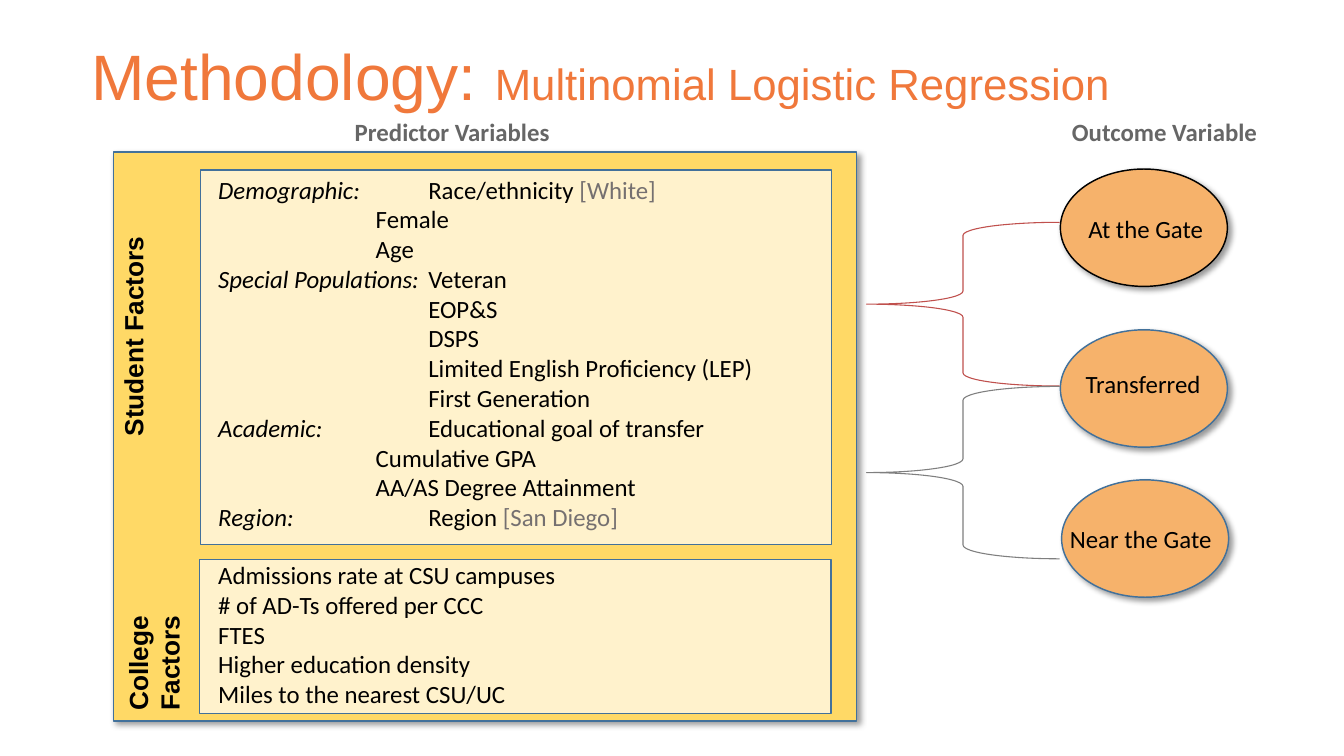
from pptx import Presentation
from pptx.dml.color import RGBColor
from pptx.enum.shapes import MSO_SHAPE as SHAPE
from pptx.enum.text import MSO_ANCHOR as ANCHOR, PP_ALIGN as ALIGN
from pptx.oxml import parse_xml
from pptx.oxml.ns import nsdecls
from pptx.util import Cm, Pt


def rgb(value):
    return RGBColor.from_string(value)


class Deck:
    black, grey, muted = "000000", "666666", "757070"
    outline, orange, gold, cream = "42719B", "F6B26B", "FFD966", "FFF2CC"
    body, display = "Calibri", "Arial"

    def __init__(self, width, height):
        self.prs = Presentation()
        self.prs.slide_width, self.prs.slide_height = Cm(width), Cm(height)
        self.s = self.prs.slides.add_slide(self.prs.slide_layouts[6])

    def shape(self, kind, box, fill=None, line=outline, weight=1, shadow=False):
        sp = self.s.shapes.add_shape(kind, *map(Cm, box))
        if fill:
            sp.fill.solid()
            sp.fill.fore_color.rgb = rgb(fill)
        else:
            sp.fill.background()
        sp.line.color.rgb = rgb(line)
        sp.line.width = Pt(weight)
        sp.shadow.inherit = False
        if shadow:
            sp._element.spPr.find("{*}effectLst").append(parse_xml(
                f'<a:outerShdw {nsdecls("a")} blurRad="{Pt(4)}" dist="{Pt(3)}" '
                'dir="2700000" algn="tl" rotWithShape="0"><a:srgbClr val="000000">'
                '<a:alpha val="40000"/></a:srgbClr></a:outerShdw>'))
        return sp

    def brace(self, box, color):
        sp = self.shape(SHAPE.LEFT_BRACE, box, line=color, weight=0.75)
        sp.adjustments[0] = 0.08

    def frame(self, box, inset=0.13, rotation=0):
        sp = self.s.shapes.add_textbox(*map(Cm, box))
        sp.rotation = rotation
        tf = sp.text_frame
        tf.word_wrap = True
        tf.margin_left = tf.margin_right = Cm(0.25)
        tf.margin_top = tf.margin_bottom = Cm(inset)
        return tf

    def font(self, target, size, name=body, color=black, bold=None):
        f = target.font
        f.size, f.name, f.bold = Pt(size), name, bold
        f.color.rgb = rgb(color)

    def label(self, box, lines, size=17, align=ALIGN.LEFT, inset=0.13, rotation=0, **style):
        tf = self.frame(box, inset, rotation)
        for i, line in enumerate(lines):
            p = tf.add_paragraph() if i else tf.paragraphs[0]
            p.text, p.alignment = line, align
            self.font(p, size, **style)

    def title(self, box, parts):
        tf = self.frame(box, 0.25)
        tf.vertical_anchor = ANCHOR.MIDDLE
        for text, size in parts:
            r = tf.paragraphs[0].add_run()
            r.text = text
            self.font(r, size, self.display, "F0783B")

    def variables(self, box, rows, tab, gap_row, gap):
        tf = self.frame(box)
        for i, (group, text, note, indent) in enumerate(rows):
            p = tf.add_paragraph() if i else tf.paragraphs[0]
            pPr = p._p.get_or_add_pPr()
            pPr.set("marL", str(Cm(indent)))
            if i == gap_row:
                p.space_before = Pt(gap)
            if group:
                pPr.append(parse_xml(
                    f'<a:tabLst {nsdecls("a")}><a:tab pos="{Cm(tab)}" algn="l"/></a:tabLst>'))
            self.font(p, 17)
            if group:
                r = p.add_run()
                r.text = group + "\t"
                r.font.italic = True
            p.add_run().text = text
            if note:
                r = p.add_run()
                r.text = note
                r.font.color.rgb = rgb(self.muted)


def main():
    d = Deck(32.51, 18.29)

    outcomes = [
        ("At the Gate", (25.65, 4.09), d.black, (25.81, 5.03, 3.81, 0.99), ALIGN.CENTER),
        ("Transferred", (25.65, 7.98), d.outline, (26.01, 8.79, 3.35, 0.99), ALIGN.LEFT),
        ("Near the Gate", (25.68, 11.61), d.outline, (25.63, 12.55, 4.19, 0.99), ALIGN.LEFT),
    ]
    for name, corner, line, box, align in outcomes:
        d.shape(SHAPE.OVAL, (*corner, 4.04, 2.84), d.orange, line, shadow=True)
        d.label(box, [name], align=align)

    d.shape(SHAPE.RECTANGLE, (2.74, 3.68, 17.98, 13.77), d.gold, shadow=True)
    d.brace((20.96, 5.38, 4.67, 3.96), "C0504D")
    d.brace((20.96, 9.35, 4.67, 4.17), "7F7F7F")
    d.shape(SHAPE.RECTANGLE, (4.85, 4.11, 15.27, 9.07), d.cream)
    d.shape(SHAPE.RECTANGLE, (4.83, 13.54, 15.27, 3.73), d.cream)

    near, far = 3.81, 5.08
    student = [
        ("Demographic:", "Race/ethnicity ", "[White]", 0),
        ("", "Female", "", near),
        ("", "Age", "", near),
        ("Special Populations:", "Veteran", "", 0),
        ("", "EOP&S", "", far),
        ("", "DSPS", "", far),
        ("", "Limited English Proficiency (LEP)", "", far),
        ("", "First Generation", "", far),
        ("Academic:", "Educational goal of transfer", "", 0),
        ("", "Cumulative GPA", "", near),
        ("", "AA/AS Degree Attainment", "", near),
        ("Region:", "Region ", "[San Diego]", 0),
    ]
    college = [("", text, "", 0) for text in (
        "Admissions rate at CSU campuses", "# of AD-Ts offered per CCC", "FTES",
        "Higher education density", "Miles to the nearest CSU/UC")]
    d.variables((5.03, 4.09, 14.88, 12.93), student + college, far, len(student), 19.4)

    for text, left in (("Predictor Variables", 8.33), ("Outcome Variable", 25.68)):
        d.label((left, 2.69, 6.05, 0.99), [text], color=d.grey, bold=True)
    d.title((1.96, 0.79, 26.11, 2.06),
            [("Methodology: ", 44), ("Multinomial Logistic Regression", 30)])
    for lines, box in ((["Student Factors"], (0.13, 6.55, 6.71, 1.8)),
                       (["College", "Factors"], (0.38, 13.44, 6.32, 1.68))):
        d.label(box, lines, 18, inset=0.25, rotation=270, name=d.display, bold=True)

    d.prs.save("out.pptx")


if __name__ == "__main__":
    main()
